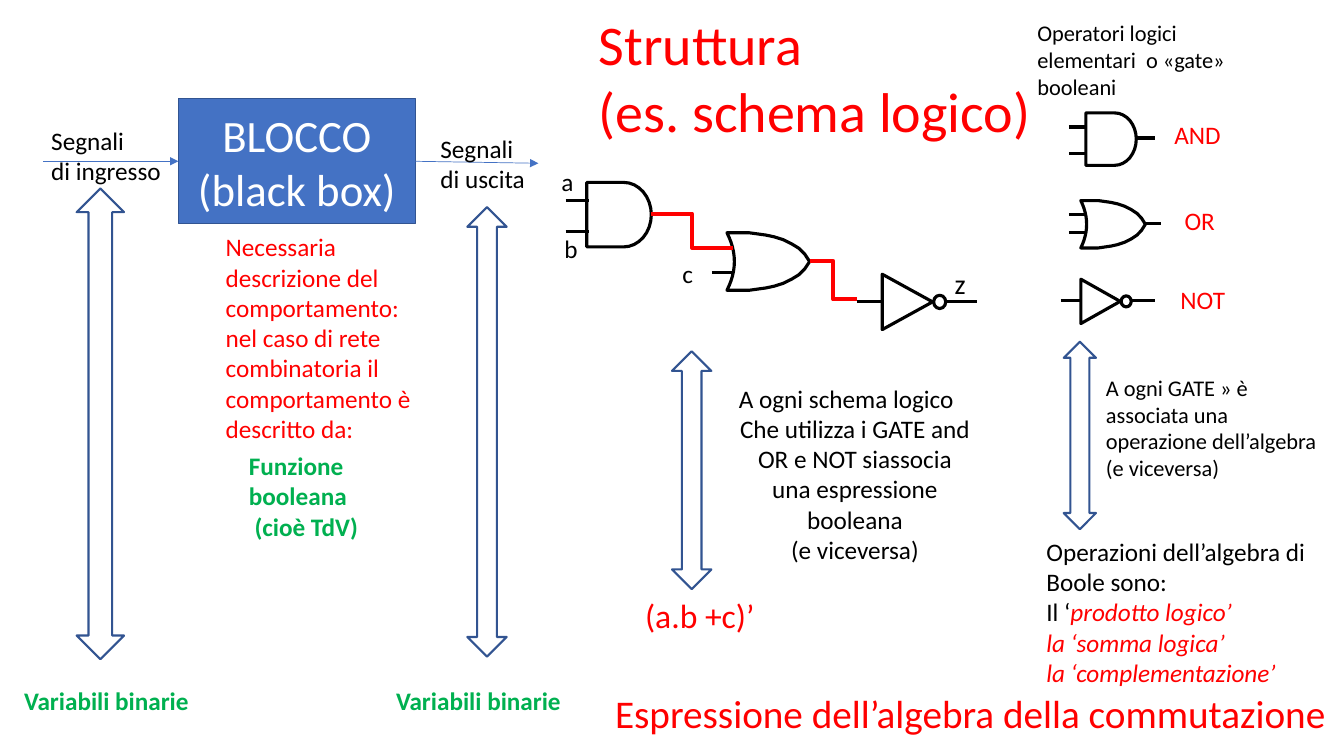
import math

import lxml.etree
import pptx
import pptx.dml.color
import pptx.enum.shapes
import pptx.enum.text
import pptx.oxml.ns
import pptx.util

Inches = pptx.util.Inches
Pt = pptx.util.Pt
qn = pptx.oxml.ns.qn
Shape = pptx.enum.shapes.MSO_SHAPE
Connector = pptx.enum.shapes.MSO_CONNECTOR
Align = pptx.enum.text.PP_ALIGN
Anchor = pptx.enum.text.MSO_ANCHOR
AutoSize = pptx.enum.text.MSO_AUTO_SIZE

COLORS = {
    "black": "000000",
    "white": "FFFFFF",
    "red": "FF0000",
    "green": "00B050",
    "blue": "4472C4",
    "outline": "325491",
}


def rgb(name):
    return pptx.dml.color.RGBColor.from_string(COLORS[name])


def write(frame, paragraphs, size=18, color="black", bold=False, italic=False,
          align=Align.LEFT, spacing=None):
    for index, content in enumerate(paragraphs):
        paragraph = frame.paragraphs[0] if index == 0 else frame.add_paragraph()
        paragraph.alignment = align
        if spacing:
            paragraph.line_spacing = spacing
        paragraph.text = content
        for run in paragraph.runs:
            run.font.name = "Calibri"
            run.font.size = Pt(size)
            run.font.bold = bold
            run.font.italic = italic
            run.font.color.rgb = rgb(color)


def and_outline():
    angles = [math.pi * step / 16 for step in range(17)]
    arc = [(0.57 + 0.43 * math.sin(angle), 0.5 - 0.5 * math.cos(angle)) for angle in angles]
    return [(0, 1), (0, 0)] + arc


def or_outline():
    upper = [(0.27, 0), (0.37, 0.02), (0.47, 0.04), (0.57, 0.07), (0.68, 0.12),
             (0.78, 0.19), (0.87, 0.27), (0.94, 0.37), (1, 0.5)]
    lower = [(x, 1 - y) for x, y in reversed(upper)]
    back = [(0.09 * (1 - (step / 6) ** 2), 0.5 - step / 12) for step in range(-6, 6)]
    return [(0, 0)] + upper + lower + back


def not_outline():
    return [(0, 0), (1, 0.5), (0, 1)]


class LogicSlide:
    def __init__(self, presentation):
        self.slide = presentation.slides.add_slide(presentation.slide_layouts[5])
        self.shapes = self.slide.shapes
        self.gate_weight = 2.25

    def title(self, left, top, width, height, text, **style):
        title = self.shapes.title
        title.left, title.top = Inches(left), Inches(top)
        title.width, title.height = Inches(width), Inches(height)
        frame = title.text_frame
        frame.word_wrap = True
        frame.auto_size = AutoSize.NONE
        frame.vertical_anchor = Anchor.MIDDLE
        write(frame, [text], **style)

    def text(self, left, top, width, height, paragraphs, wrap=True, **style):
        box = self.shapes.add_textbox(Inches(left), Inches(top), Inches(width), Inches(height))
        frame = box.text_frame
        frame.word_wrap = wrap
        frame.auto_size = AutoSize.SHAPE_TO_FIT_TEXT
        write(frame, paragraphs, **style)
        return frame

    def paint(self, shape, fill, line, weight):
        shape.shadow.inherit = False
        if fill:
            shape.fill.solid()
            shape.fill.fore_color.rgb = rgb(fill)
        else:
            shape.fill.background()
        shape.line.color.rgb = rgb(line)
        shape.line.width = Pt(weight)

    def shape(self, kind, left, top, width, height, fill, line, weight):
        shape = self.shapes.add_shape(kind, Inches(left), Inches(top), Inches(width), Inches(height))
        self.paint(shape, fill, line, weight)
        return shape

    def double_arrow(self, left, top, width, height, thickness=0.5):
        arrow = self.shape(Shape.LEFT_RIGHT_ARROW, left, top, width, height, None, "outline", 1.5)
        arrow.rotation = 90
        arrow.adjustments[0] = thickness

    def line(self, start, end, color="black", weight=2.25, kind=Connector.STRAIGHT, arrow=False):
        connector = self.shapes.add_connector(kind, *[Inches(value) for value in start + end])
        connector.line.color.rgb = rgb(color)
        connector.line.width = Pt(weight)
        properties = connector.element.spPr
        if arrow:
            lxml.etree.SubElement(properties.find(qn("a:ln")), qn("a:tailEnd"), type="triangle")
        lxml.etree.SubElement(properties, qn("a:effectLst"))
        return connector

    def gate(self, outline, left, top, width, height):
        points = [(Inches(left + width * x), Inches(top + height * y)) for x, y in outline]
        builder = self.shapes.build_freeform(*points[0], scale=1.0)
        builder.add_line_segments(points[1:], close=True)
        self.paint(builder.convert_to_shape(), "white", "black", self.gate_weight)

    def inverter(self, left, top, width, height, bubble):
        self.gate(not_outline(), left, top, width, height)
        self.shape(Shape.OVAL, left + width + 0.01, top + height / 2 - bubble * 0.55,
                   bubble, bubble * 1.1, "white", "black", self.gate_weight)


def main():
    presentation = pptx.Presentation()
    presentation.slide_width = Inches(13.33)
    presentation.slide_height = Inches(7.5)
    page = LogicSlide(presentation)

    page.title(6, 6.61, 7.62, 0.99, "Espressione dell’algebra della commutazione",
               size=28, color="red", spacing=0.9)

    block = page.shape(Shape.RECTANGLE, 1.77, 0.98, 2.35, 1.24, "blue", "outline", 1)
    block.text_frame.vertical_anchor = Anchor.MIDDLE
    write(block.text_frame, ["BLOCCO", "(black box)"], size=32, color="white", align=Align.CENTER)
    page.line((0.43, 1.6), (1.77, 1.6), "blue", 0.5, arrow=True).end_connect(block, 1)
    page.line((4.12, 1.6), (5.34, 1.62), "blue", 0.5, arrow=True).begin_connect(block, 3)

    page.double_arrow(9.78, 4.16, 1.86, 0.32, 0.59)
    for left, top, width, height in [(5.68, 4.47, 2.36, 0.39), (-1.34, 3.97, 4.67, 0.47),
                                     (2.6, 4.09, 4.46, 0.39)]:
        page.double_arrow(left, top, width, height)

    page.gate(and_outline(), 10.77, 1.12, 0.5, 0.52)
    page.gate(or_outline(), 10.72, 1.99, 0.64, 0.47)
    page.inverter(10.72, 2.77, 0.39, 0.44, 0.1)
    page.gate(and_outline(), 5.82, 1.81, 0.64, 0.64)
    page.gate(or_outline(), 7.21, 2.31, 0.82, 0.57)
    page.inverter(8.75, 2.72, 0.5, 0.55, 0.12)

    wires = [
        (10.6, 10.78, 1.26), (10.6, 10.78, 1.52), (11.28, 11.46, 1.37),
        (10.6, 10.76, 2.13), (10.6, 10.76, 2.31), (11.36, 11.52, 2.22),
        (10.52, 10.72, 2.98), (11.21, 11.46, 2.98),
        (5.61, 5.84, 1.99), (5.61, 5.84, 2.3), (7.06, 7.26, 2.7),
        (8.5, 8.75, 2.99), (9.38, 9.69, 2.99),
    ]
    for start, end, height in wires:
        page.line((start, height), (end, height))
    for start, end in [((6.46, 2.12), (7.27, 2.46)), ((8.03, 2.59), (8.5, 2.97))]:
        page.line(start, end, "red", 3, Connector.ELBOW)

    labels = [
        ("AND", 11.55, 1.13, 0.67, 18, "red"), ("OR", 11.65, 1.99, 0.51, 18, "red"),
        ("NOT", 11.61, 2.77, 0.65, 18, "red"), ("(a.b +c)’", 6.3, 5.85, 1.3, 24, "red"),
        ("a", 5.47, 1.6, 0.32, 18, "black"), ("b", 5.5, 2.27, 0.34, 18, "black"),
        ("c", 6.67, 2.51, 0.31, 18, "black"), ("z", 9.37, 2.59, 0.31, 20, "black"),
    ]
    for label, left, top, width, size, color in labels:
        page.text(left, top, width, 0.1 + size / 60, [label], wrap=False, size=size, color=color)
    for left in (0.14, 3.83):
        page.text(left, 6.75, 1.85, 0.4, ["Variabili binarie"], wrap=False, color="green", bold=True)

    page.text(5.84, 0.04, 4.48, 1.45, ["Struttura\n(es. schema logico)"],
              wrap=False, size=40, color="red")
    page.text(0.41, 1.19, 1.44, 0.71, ["Segnali", "di ingresso"])
    page.text(4.27, 1.27, 1.07, 0.71, ["Segnali", "di uscita"], wrap=False)
    page.text(2.14, 2.25, 2.27, 2.22, [
        "Necessaria descrizione del comportamento:",
        "nel caso di rete combinatoria il comportamento è descritto da:"], color="red")
    page.text(2.37, 4.42, 1.61, 1.31, ["Funzione booleana", " (cioè TdV)"], color="green", bold=True)
    schema = page.text(7.23, 3.75, 2.5, 2.22, [
        "A ogni schema logico",
        "Che utilizza i GATE and OR e NOT siassocia una espressione booleana",
        "(e viceversa)"], align=Align.CENTER)
    schema.paragraphs[0].alignment = Align.LEFT
    page.text(10.19, 0.14, 2.5, 0.91, ["Operatori logici elementari  o «gate» booleani"], size=16)
    page.text(10.87, 3.66, 2.41, 1.18,
              ["A ogni GATE » è associata una  operazione dell’algebra (e viceversa)"], size=16)

    operations = page.text(10.28, 5.27, 3, 1.62, [
        "Operazioni dell’algebra di Boole sono:", "Il ‘",
        "la ‘somma logica’", "la ‘complementazione’"])
    operations.paragraphs[1].add_run().text = "prodotto logico’"
    for run in [paragraph.runs[-1] for paragraph in operations.paragraphs[1:]]:
        run.font.name = "Calibri"
        run.font.size = Pt(18)
        run.font.italic = True
        run.font.color.rgb = rgb("red")

    presentation.save("out.pptx")


if __name__ == "__main__":
    main()
